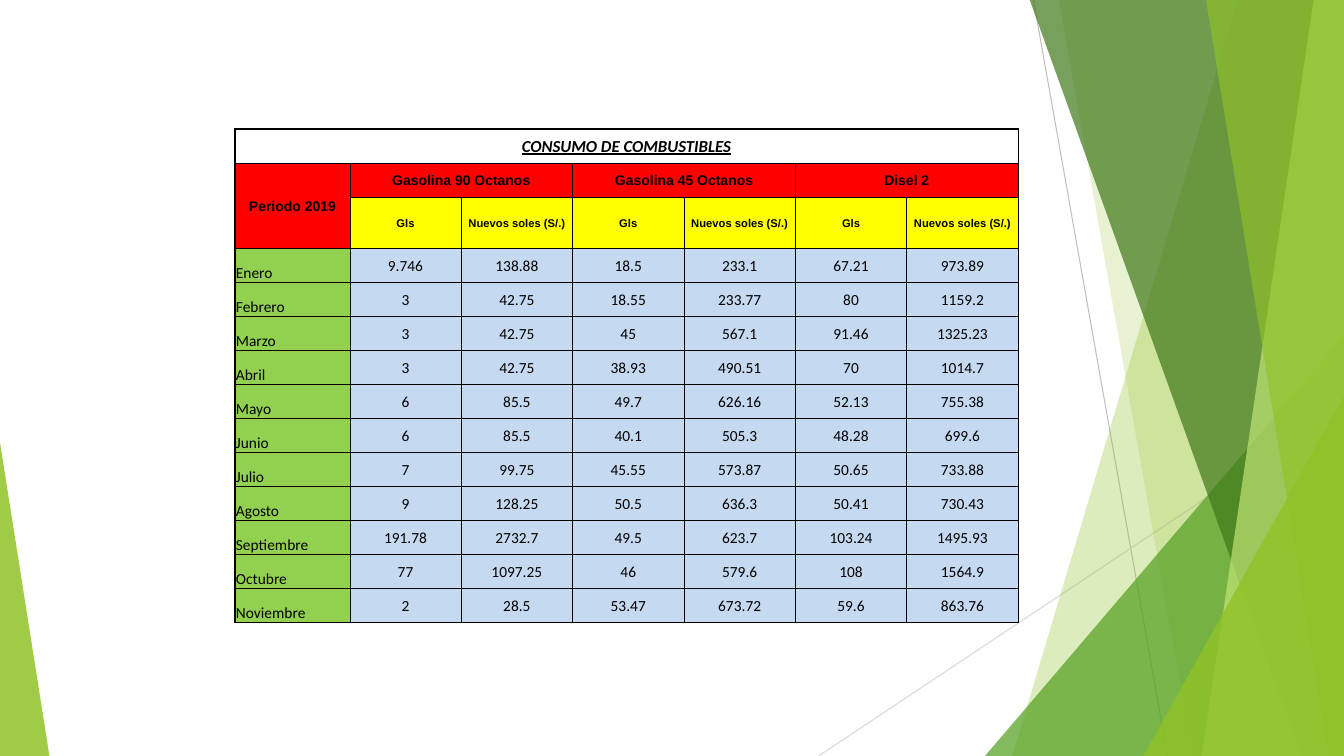
from lxml.etree import SubElement
from pptx import Presentation
from pptx.dml.color import RGBColor
from pptx.enum.shapes import MSO_CONNECTOR, MSO_SHAPE
from pptx.enum.text import MSO_ANCHOR as Anchor, PP_ALIGN as Align
from pptx.oxml.ns import qn
from pptx.util import Inches, Pt

WIDTH, HEIGHT, TOP = 13.33, 7.5, -0.01
LINES = [
    ((10.25, 0), (11.58, 7.5), "BFBFBF"),
    ((13.33, 4.03), (8.12, 7.5), "D9D9D9"),
]
BACK_BANDS = [(12.28, 10.04, "90C226", 30), (10.5, 11.83, "90C226", 20)]
FRONT_BANDS = [
    (10.21, 12.91, "3F7819", 70),
    (13.03, 11.92, "C0E474", 70),
    (11.96, 13.18, "90C226", 65),
]
FUELS = ["Gasolina 90 Octanos", "Gasolina 45 Octanos", "Disel 2"]
UNITS = ["Gls", "Nuevos soles (S/.)"]
MONTHS = [
    ("Enero", "9.746", "138.88", "18.5", "233.1", "67.21", "973.89"),
    ("Febrero", "3", "42.75", "18.55", "233.77", "80", "1159.2"),
    ("Marzo", "3", "42.75", "45", "567.1", "91.46", "1325.23"),
    ("Abril", "3", "42.75", "38.93", "490.51", "70", "1014.7"),
    ("Mayo", "6", "85.5", "49.7", "626.16", "52.13", "755.38"),
    ("Junio", "6", "85.5", "40.1", "505.3", "48.28", "699.6"),
    ("Julio", "7", "99.75", "45.55", "573.87", "50.65", "733.88"),
    ("Agosto", "9", "128.25", "50.5", "636.3", "50.41", "730.43"),
    ("Septiembre", "191.78", "2732.7", "49.5", "623.7", "103.24", "1495.93"),
    ("Octubre", "77", "1097.25", "46", "579.6", "108", "1564.9"),
    ("Noviembre", "2", "28.5", "53.47", "673.72", "59.6", "863.76"),
]
HEADER_ROWS, COLUMNS = 3, 7
TABLE_WIDTH, TABLE_HEIGHT = 7.77, 4.9
MONTH_WIDTH, UNIT_HEIGHT = 1.14, 0.51


def color(value):
    return RGBColor.from_string(value)


def paint(shape, fill, opacity):
    shape.shadow.inherit = False
    shape.line.fill.background()
    shape.fill.solid()
    shape.fill.fore_color.rgb = color(fill)
    rgb = shape.fill._xPr.find(qn("a:solidFill"))[0]
    SubElement(rgb, qn("a:alpha")).set("val", str(opacity * 1000))


def add_line(slide, start, end, stroke):
    points = [Inches(value) for value in start + end]
    line = slide.shapes.add_connector(MSO_CONNECTOR.STRAIGHT, *points)
    line.line.color.rgb = color(stroke)
    line.line.width = Pt(0.75)
    SubElement(line._element.spPr, qn("a:effectLst"))


def add_band(slide, top_x, bottom_x, fill, opacity):
    corners = [(WIDTH, TOP), (WIDTH, HEIGHT), (bottom_x, HEIGHT)]
    builder = slide.shapes.build_freeform(Inches(top_x), Inches(TOP))
    builder.add_line_segments([(Inches(x), Inches(y)) for x, y in corners])
    paint(builder.convert_to_shape(), fill, opacity)


def add_triangle(slide, left, top, width, apex, fill, opacity):
    shape = slide.shapes.add_shape(
        MSO_SHAPE.ISOSCELES_TRIANGLE,
        Inches(left), Inches(top), Inches(width), Inches(HEIGHT - top),
    )
    shape.adjustments[0] = apex
    paint(shape, fill, opacity)


def add_borders(cell, row, column):
    thick = {"L": column == 0, "R": column == COLUMNS - 1, "T": row == 0, "B": False}
    if row == 0:
        thick["R"] = True
    for side, is_thick in thick.items():
        width = Pt(1 if is_thick else 0.5)
        border = SubElement(cell._tc.get_or_add_tcPr(), qn(f"a:ln{side}"), w=str(width))
        fill = SubElement(border, qn("a:solidFill"))
        SubElement(fill, qn("a:srgbClr"), val="000000")


def write_cell(cell, text, size, font, bold=False, align=Align.CENTER, anchor=Anchor.MIDDLE):
    cell.text_frame.text = text
    cell.vertical_anchor = anchor
    paragraph = cell.text_frame.paragraphs[0]
    paragraph.alignment = align
    run = paragraph.runs[0]
    run.font.size = Pt(size)
    run.font.name = font
    run.font.bold = bold
    run.font.color.rgb = color("000000")
    return run


def cell_fill(row, column):
    if row == 1 or (row == 2 and column == 0):
        return "FF0000"
    if row == 2:
        return "FFFF00"
    return "92D050" if column == 0 else "C5D9F1"


def style_cell(cell, row, column):
    cell.margin_left = cell.margin_right = cell.margin_top = Inches(0.01)
    cell.margin_bottom = 0
    add_borders(cell, row, column)
    if row == 0:
        cell.fill.background()
    else:
        cell.fill.solid()
        cell.fill.fore_color.rgb = color(cell_fill(row, column))


def write_headers(table):
    table.cell(0, 0).merge(table.cell(0, COLUMNS - 1))
    title = write_cell(table.cell(0, 0), "CONSUMO DE COMBUSTIBLES", 12, "Calibri", bold=True)
    title.font.italic = True
    title.font.underline = True
    table.cell(1, 0).merge(table.cell(2, 0))
    write_cell(table.cell(1, 0), "Periodo 2019", 10, "Arial", bold=True)
    for index, fuel in enumerate(FUELS):
        first = 1 + index * len(UNITS)
        table.cell(1, first).merge(table.cell(1, first + 1))
        write_cell(table.cell(1, first), fuel, 10, "Arial", bold=True)
        for offset, unit in enumerate(UNITS):
            write_cell(table.cell(2, first + offset), unit, 8, "Arial", bold=True)


def write_months(table):
    for row, (month, *values) in enumerate(MONTHS, HEADER_ROWS):
        write_cell(table.cell(row, 0), month, 11, "Calibri", align=Align.LEFT, anchor=Anchor.BOTTOM)
        for column, value in enumerate(values, 1):
            write_cell(table.cell(row, column), value, 11, "Calibri")


def add_fuel_table(slide):
    rows = HEADER_ROWS + len(MONTHS)
    table = slide.shapes.add_table(
        rows, COLUMNS, Inches(2.33), Inches(1.28), Inches(TABLE_WIDTH), Inches(TABLE_HEIGHT)
    ).table
    table.first_row = False
    table.horz_banding = False
    for index, column in enumerate(table.columns):
        value_width = (TABLE_WIDTH - MONTH_WIDTH) / (COLUMNS - 1)
        column.width = Inches(value_width if index else MONTH_WIDTH)
    for index, row in enumerate(table.rows):
        row_height = (TABLE_HEIGHT - UNIT_HEIGHT) / (rows - 1)
        row.height = Inches(UNIT_HEIGHT if index == 2 else row_height)
        for column, cell in enumerate(row.cells):
            style_cell(cell, index, column)
    write_headers(table)
    write_months(table)


def main():
    presentation = Presentation()
    presentation.slide_width = Inches(WIDTH)
    presentation.slide_height = Inches(HEIGHT)
    slide = presentation.slides.add_slide(presentation.slide_layouts[6])
    for line in LINES:
        add_line(slide, *line)
    for band in BACK_BANDS:
        add_band(slide, *band)
    add_triangle(slide, 9.77, 3.33, 3.56, 1, "54A021", 72)
    for band in FRONT_BANDS:
        add_band(slide, *band)
    add_triangle(slide, 11.34, 3.93, 1.99, 1, "90C226", 80)
    add_triangle(slide, 0, 4.39, 0.49, 0, "90C226", 85)
    add_fuel_table(slide)
    presentation.save("out.pptx")


if __name__ == "__main__":
    main()
